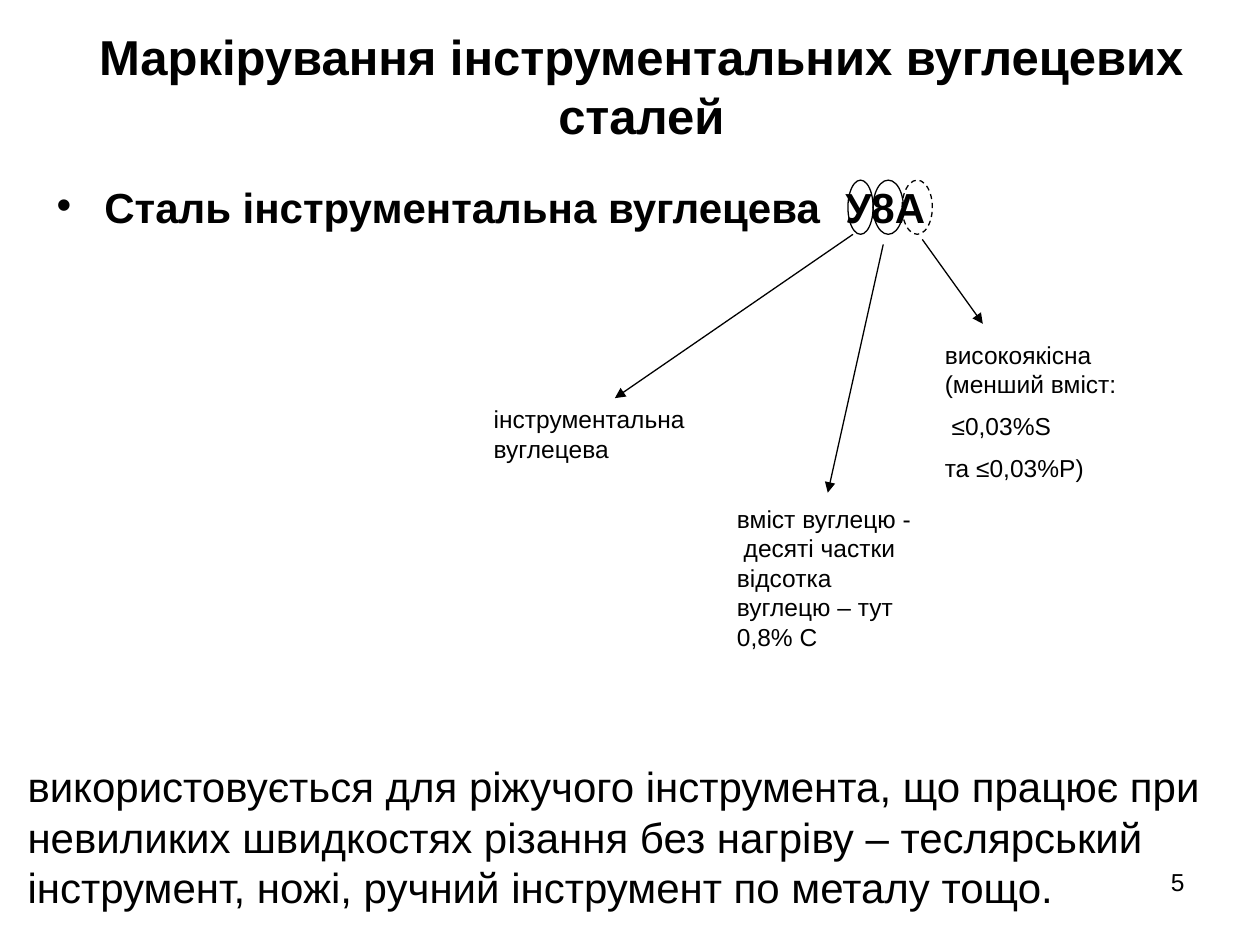
from lxml import etree
from pptx import Presentation
from pptx.dml.color import RGBColor
from pptx.enum import dml, shapes, text
from pptx.oxml.ns import qn
from pptx.util import Inches, Pt

COLOURS = {"ink": "000000", "paper": "FFFFFF"}
FONT = "Arial"
INK = RGBColor.from_string(COLOURS["ink"])

TITLE = ("Маркірування інструментальних вуглецевих сталей", (0.59, 0.21, 9, 0.94))
GRADE_BOX = (0.35, 1.39, 7.38, 0.46)
GRADE_RUNS = [  # text, size, bold
    ("Сталь інструментальна вуглецева", 24, True),
    (" ", 28, False),
    (" У8А", 24, True),
]
NOTES = [  # paragraphs, box, size, alignment
    (["інструментальна вуглецева"], (3.82, 3.16, 1.77, 0.57), 14, "LEFT"),
    (["високоякісна (менший вміст:", " ≤0,03%S", "та ≤0,03%Р)"],
     (7.4, 2.65, 1.73, 1.26), 14, "LEFT"),
    (["вміст вуглецю -  десяті частки відсотка вуглецю – тут 0,8% С"],
     (5.75, 3.95, 1.61, 1.26), 14, "LEFT"),
    (["використовується для ріжучого інструмента, що працює при невиликих "
      "швидкостях різання без нагріву – теслярський інструмент, ножі, "
      "ручний інструмент по металу тощо."], (0.12, 5.99, 9.69, 1.3), 24, "LEFT"),
    (["5"], (7.17, 6.83, 2.33, 0.52), 14, "RIGHT"),
]
RING_TOP, RING_HEIGHT = 1.43, 0.43
RINGS = [(6.73, 0.2, False), (6.93, 0.24, False), (7.16, 0.24, True)]  # left, width, dashed
ARROWS = [
    ((6.77, 1.86), (4.88, 3.16)),
    ((7.01, 1.94), (6.57, 3.91)),
    ((7.32, 1.9), (7.8, 2.57)),
]


def inches(values):
    return [Inches(value) for value in values]


def add_run(paragraph, wording, size, bold=False):
    run = paragraph.add_run()
    run.text = wording
    for name, value in {"name": FONT, "size": Pt(size), "bold": bold}.items():
        setattr(run.font, name, value)
    run.font.color.rgb = INK


def add_text_frame(slide, box):
    frame = slide.shapes.add_textbox(*inches(box)).text_frame
    frame.word_wrap = True
    return frame


def add_title(slide):
    wording, box = TITLE
    title = slide.shapes.title
    for name, value in zip(("left", "top", "width", "height"), inches(box)):
        setattr(title, name, value)
    title.text_frame.vertical_anchor = text.MSO_ANCHOR.MIDDLE
    paragraph = title.text_frame.paragraphs[0]
    paragraph.alignment = text.PP_ALIGN.CENTER
    add_run(paragraph, wording, 28, True)


def add_grade(slide):
    paragraph = add_text_frame(slide, GRADE_BOX).paragraphs[0]
    paragraph.line_spacing = 0.9
    for run in GRADE_RUNS:
        add_run(paragraph, *run)
    properties = paragraph._p.get_or_add_pPr()
    properties.set("marL", str(Inches(0.38)))
    properties.set("indent", str(Inches(-0.38)))
    etree.SubElement(properties, qn("a:buFont")).set("typeface", FONT)
    etree.SubElement(properties, qn("a:buChar")).set("char", "•")


def add_note(slide, wordings, box, size, alignment):
    frame = add_text_frame(slide, box)
    for index, wording in enumerate(wordings):
        paragraph = frame.add_paragraph() if index else frame.paragraphs[0]
        paragraph.alignment = text.PP_ALIGN[alignment]
        paragraph.space_before = Pt(size / 2 if index else 0)
        add_run(paragraph, wording, size)


def format_line(line):
    line.color.rgb = INK
    line.width = Pt(0.75)


def add_ring(slide, left, width, dashed):
    ring = slide.shapes.add_shape(
        shapes.MSO_SHAPE.OVAL, *inches((left, RING_TOP, width, RING_HEIGHT)))
    ring.shadow.inherit = False
    ring.fill.background()
    format_line(ring.line)
    if dashed:
        ring.line.dash_style = dml.MSO_LINE.DASH


def add_arrow(slide, start, end):
    arrow = slide.shapes.add_connector(
        shapes.MSO_CONNECTOR.STRAIGHT, *inches(start + end))
    format_line(arrow.line)
    etree.SubElement(arrow.line._get_or_add_ln(), qn("a:tailEnd")).set("type", "triangle")
    etree.SubElement(arrow._element.spPr, qn("a:effectLst"))


def main():
    deck = Presentation()
    deck.slide_width, deck.slide_height = inches((10, 7.5))
    slide = deck.slides.add_slide(deck.slide_layouts[5])
    slide.background.fill.solid()
    slide.background.fill.fore_color.rgb = RGBColor.from_string(COLOURS["paper"])
    add_title(slide)
    add_grade(slide)
    for note in NOTES:
        add_note(slide, *note)
    for ring in RINGS:
        add_ring(slide, *ring)
    for arrow in ARROWS:
        add_arrow(slide, *arrow)
    deck.save("out.pptx")


if __name__ == "__main__":
    main()
